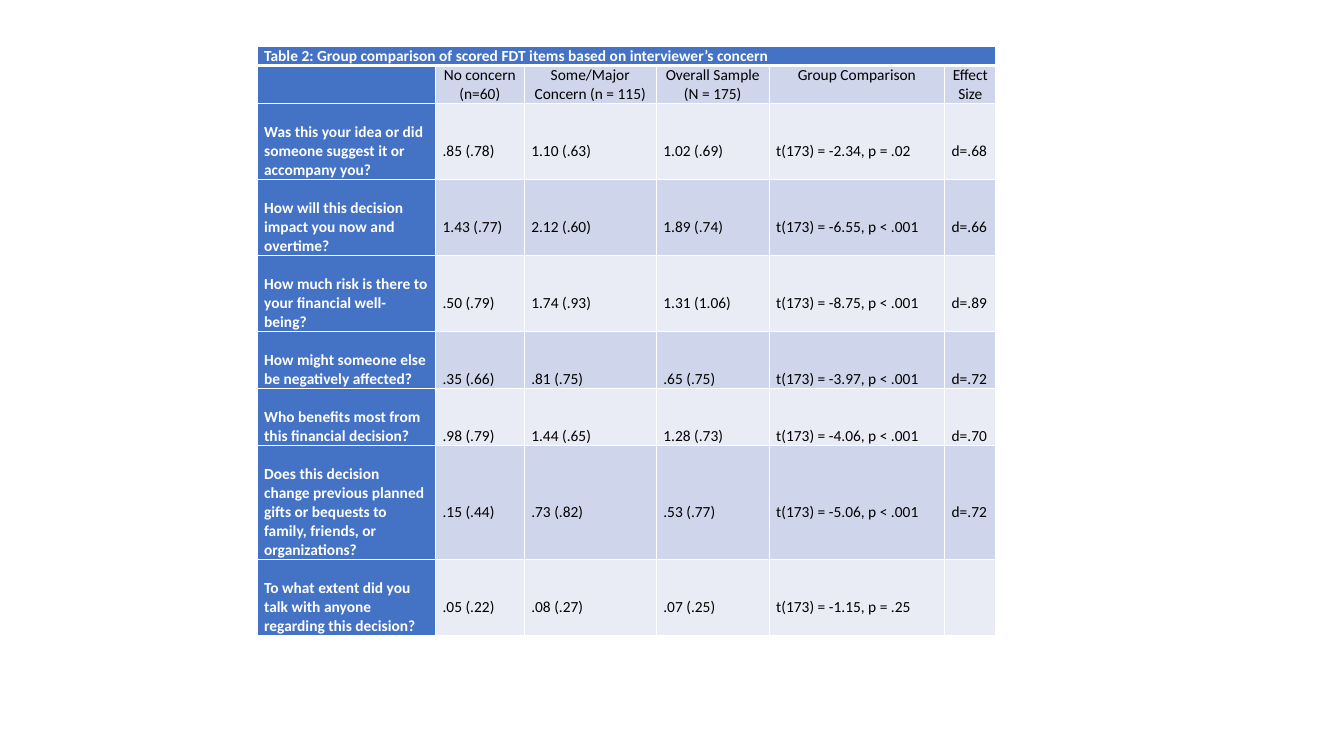
from dataclasses import dataclass

from lxml.etree import SubElement
from pptx import Presentation
from pptx.dml.color import RGBColor
from pptx.enum.text import MSO_ANCHOR, PP_ALIGN as Align
from pptx.oxml.ns import qn
from pptx.table import _Cell as Cell
from pptx.util import Inches, Pt

COLORS = {
    "heading": "4472C4",
    "dark_band": "CFD5EA",
    "light_band": "E9EBF5",
    "white": "FFFFFF",
    "black": "000000",
}
FONT_NAME = "Calibri"
FONT_SIZE = 11
SIDE_MARGIN = Inches(0.07)
TABLE_LEFT, TABLE_TOP, TABLE_HEIGHT = Inches(2.55), Inches(0.46), Inches(5.84)
COLUMN_WIDTHS = [Inches(width) for width in (1.77, 0.88, 1.31, 1.12, 1.74, 0.51)]

TITLE = "Table 2: Group comparison of scored FDT items based on interviewer’s concern"
HEADERS = (
    "",
    "No concern (n=60)",
    "Some/Major Concern (n = 115)",
    "Overall Sample (N = 175)",
    "Group Comparison",
    "Effect Size",
)
TITLE_LINES, HEADER_LINES = 1, 2


@dataclass(frozen=True)
class Item:
    """A scored question; lines is its row height and value_line the lines above its values."""

    question: str
    values: tuple[str, ...]
    lines: int = 4
    value_line: int = 2


ITEMS = (
    Item("Was this your idea or did someone suggest it or accompany you?",
         (".85 (.78)", "1.10 (.63)", "1.02 (.69)", "t(173) = -2.34, p = .02", "d=.68")),
    Item("How will this decision impact you now and overtime?",
         ("1.43 (.77)", "2.12 (.60)", "1.89 (.74)", "t(173) = -6.55, p < .001", "d=.66")),
    Item("How much risk is there to your financial well-being?",
         (".50 (.79)", "1.74 (.93)", "1.31 (1.06)", "t(173) = -8.75, p < .001", "d=.89")),
    Item("How might someone else be negatively affected?",
         (".35 (.66)", ".81 (.75)", ".65 (.75)", "t(173) = -3.97, p < .001", "d=.72"), lines=3),
    Item("Who benefits most from this financial decision?",
         (".98 (.79)", "1.44 (.65)", "1.28 (.73)", "t(173) = -4.06, p < .001", "d=.70"), lines=3),
    Item("Does this decision change previous planned gifts or bequests to family, friends, "
         "or organizations?",
         (".15 (.44)", ".73 (.82)", ".53 (.77)", "t(173) = -5.06, p < .001", "d=.72"),
         lines=6, value_line=3),
    Item("To what extent did you talk with anyone regarding this decision?",
         (".05 (.22)", ".08 (.27)", ".07 (.25)", "t(173) = -1.15, p = .25", "")),
)
ROW_LINES = [TITLE_LINES, HEADER_LINES, *(item.lines for item in ITEMS)]
LINE_HEIGHT = TABLE_HEIGHT // sum(ROW_LINES)


def set_borders(cell: Cell, bottom: float = 1, top: float = 1) -> None:
    properties = cell._tc.get_or_add_tcPr()
    widths = {"a:lnL": 1, "a:lnR": 1, "a:lnT": top, "a:lnB": bottom}
    for position, (tag, width) in enumerate(widths.items()):
        line = SubElement(properties, qn(tag), w=str(Pt(width)))
        fill = SubElement(line, qn("a:solidFill"))
        SubElement(fill, qn("a:srgbClr"), val=COLORS["white"])
        properties.insert(position, line)


def fill_cell(cell: Cell, text: str, fill: str, lines_above: int = 0,
              align: Align = Align.LEFT) -> None:
    heading = fill == "heading"
    cell.fill.solid()
    cell.fill.fore_color.rgb = RGBColor.from_string(COLORS[fill])
    cell.margin_left = cell.margin_right = SIDE_MARGIN
    cell.margin_top = lines_above * LINE_HEIGHT
    cell.margin_bottom = 0
    cell.vertical_anchor = MSO_ANCHOR.TOP
    paragraph = cell.text_frame.paragraphs[0]
    paragraph.text = text
    paragraph.alignment = align
    for run in paragraph.runs:
        run.font.name = FONT_NAME
        run.font.size = Pt(FONT_SIZE)
        run.font.bold = heading
        run.font.color.rgb = RGBColor.from_string(COLORS["white" if heading else "black"])
    SubElement(paragraph._p, qn("a:endParaRPr"), sz=str(FONT_SIZE * 100))


def main() -> None:
    presentation = Presentation()
    presentation.slide_width, presentation.slide_height = Inches(13.33), Inches(7.5)
    slide = presentation.slides.add_slide(presentation.slide_layouts[6])
    table = slide.shapes.add_table(
        len(ROW_LINES), len(COLUMN_WIDTHS),
        TABLE_LEFT, TABLE_TOP, sum(COLUMN_WIDTHS), TABLE_HEIGHT,
    ).table
    table.first_row = table.horz_banding = False
    for column, width in zip(table.columns, COLUMN_WIDTHS):
        column.width = width
    for row, lines in zip(table.rows, ROW_LINES):
        row.height = lines * LINE_HEIGHT

    for index, header in enumerate(HEADERS):
        title_cell, header_cell = table.cell(0, index), table.cell(1, index)
        fill_cell(title_cell, "" if index else TITLE, "heading")
        set_borders(title_cell, bottom=3)
        fill_cell(header_cell, header, "dark_band" if index else "heading", align=Align.CENTER)
        set_borders(header_cell, top=3)
    table.cell(0, 0).merge(table.cell(0, len(HEADERS) - 1))

    for row_index, item in enumerate(ITEMS, start=2):
        band = "dark_band" if row_index % 2 else "light_band"
        for column_index, text in enumerate((item.question, *item.values)):
            cell = table.cell(row_index, column_index)
            if column_index == 0:
                fill_cell(cell, text, "heading", lines_above=1)
            else:
                fill_cell(cell, text, band, lines_above=item.value_line)
            set_borders(cell)

    presentation.save("out.pptx")


if __name__ == "__main__":
    main()
